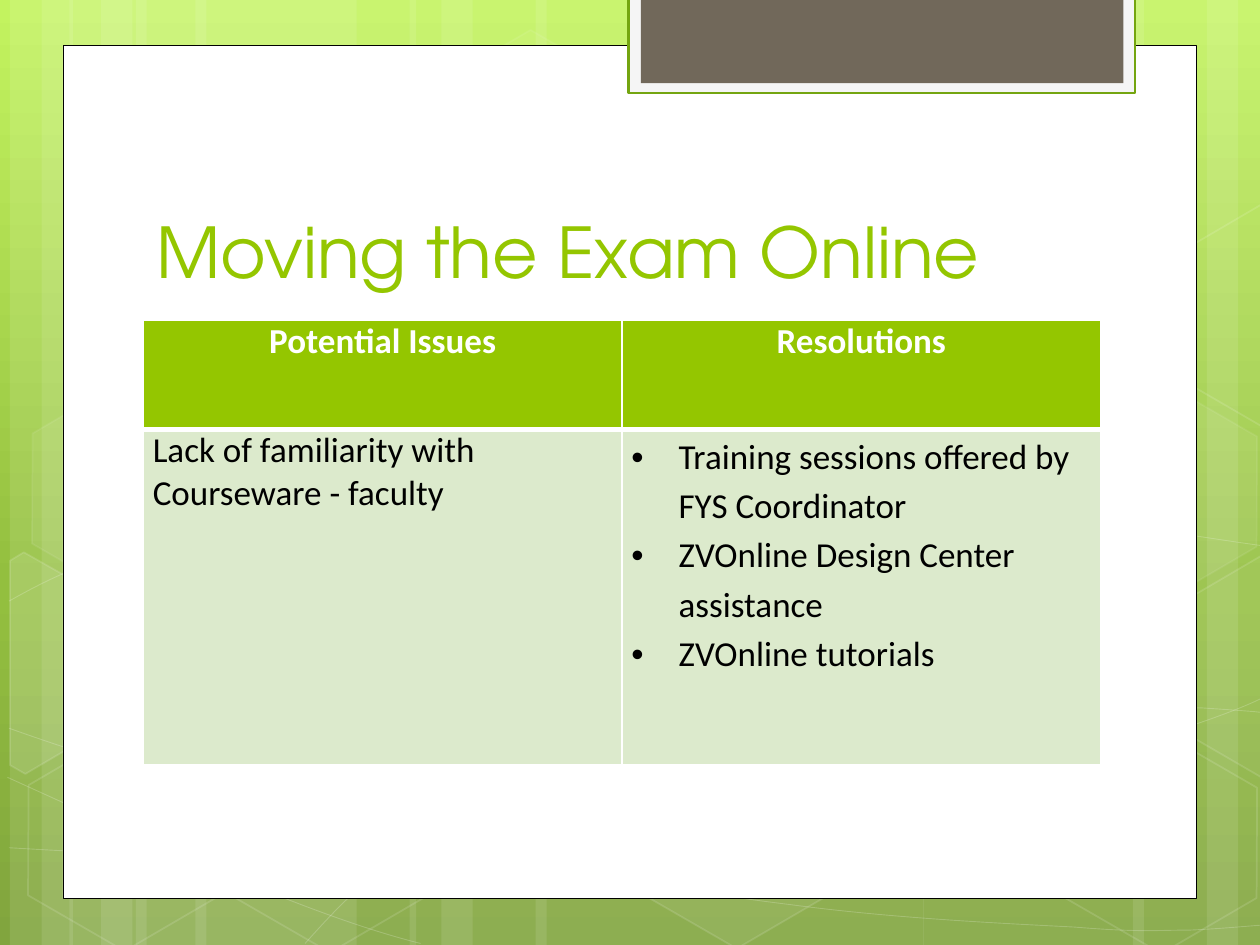
from copy import deepcopy
from dataclasses import dataclass
from math import cos, radians, sin
from typing import Optional

from lxml.etree import SubElement
from pptx import Presentation
from pptx.dml.color import RGBColor
from pptx.enum.shapes import MSO_SHAPE as Shape
from pptx.enum.text import MSO_ANCHOR as Anchor, PP_ALIGN as Align
from pptx.oxml import parse_xml
from pptx.oxml.ns import nsdecls, qn
from pptx.util import Cm, Pt

WHITE = RGBColor(0xFF, 0xFF, 0xFF)
BLACK = RGBColor(0x00, 0x00, 0x00)
LIME = RGBColor(0x94, 0xC6, 0x00)
PALE_GREEN = RGBColor(0xDC, 0xEA, 0xCC)
DARK_GREEN = RGBColor(0x74, 0xA5, 0x10)
OFF_WHITE = RGBColor(0xF5, 0xF5, 0xF5)
TAUPE = RGBColor(0x71, 0x68, 0x5A)
BACKGROUND = [(0, RGBColor(0xC3, 0xF3, 0x5F)), (0.62, RGBColor(0x93, 0xBF, 0x3F)),
              (1, RGBColor(0x81, 0xA5, 0x3E))]
WIDTH, HEIGHT = 25.4, 19.05
TILT = 30


@dataclass
class Style:
    fill: Optional[RGBColor] = None
    fill_alpha: int = 100
    line: Optional[RGBColor] = None
    line_alpha: int = 100
    weight: float = 1


@dataclass
class Strips:
    edge: float
    direction: int
    wide: float


@dataclass
class Hexagon:
    left: float
    top: float
    fill_alpha: int = 0
    line_alpha: int = 12


STRIPS = [Strips(0.2, 1, 4.45), Strips(1.4, 1, 4.45),
          Strips(25.6, -1, 4.45), Strips(8.26, 1, 7.82)]
CURVES = [
    [(0.18, 17.09), (1.55, 17.17), (2.92, 17.25), (4.83, 17.22), (6.73, 17.2),
     (9.09, 17.15), (11.63, 16.89), (14.17, 16.64), (17.78, 16.15), (20.12, 15.67),
     (22.43, 15.19), (24.82, 14.43), (25.58, 14)],
    [(0.18, 12.12), (0.91, 11.71), (1.65, 11.33), (3.07, 10.95), (4.52, 10.57),
     (6.58, 10.01), (8.81, 9.83), (11.07, 9.65), (13.82, 9.63), (16.61, 9.83),
     (19.41, 10.03), (24.05, 10.82), (25.58, 11.02)],
    [(0.15, 15.67), (3.23, 17.07), (6.27, 18.47), (8.48, 19.02)],
    [(0.18, 14.68), (0.97, 14.96), (1.78, 15.24), (3.25, 15.65), (4.72, 16.03),
     (6.93, 16.66), (9.07, 17.09), (11.18, 17.53), (13.84, 17.98), (15.95, 18.24),
     (18.06, 18.52), (20.32, 18.62), (21.67, 18.69), (22.99, 18.8), (23.34, 18.75),
     (24, 18.75), (24.66, 18.72), (25.12, 18.67), (25.58, 18.64)],
    [(6.15, 19.02), (6.6, 18.52), (7.06, 18.01), (7.67, 17.55), (8.28, 17.09),
     (9.14, 16.59), (9.86, 16.23), (10.57, 15.88), (11, 15.72), (11.94, 15.47),
     (12.85, 15.21), (14.55, 14.86), (15.44, 14.68), (16.36, 14.5), (16.48, 14.5),
     (17.27, 14.45), (18.06, 14.38), (19.3, 14.3), (20.17, 14.27), (21.06, 14.25),
     (22.5, 14.27), (22.5, 14.27), (22.5, 14.27), (24.21, 14.27), (24.21, 14.27),
     (24.66, 14.3), (25.1, 14.33), (25.32, 14.35), (25.55, 14.38), (25.48, 14.35),
     (25.55, 14.38)],
]
HEXAGONS = [Hexagon(8.48, 0.91, 4, 8), Hexagon(12.62, 14.96, 6), Hexagon(0.28, 15.01),
            Hexagon(0.36, 7.92, 7, 8), Hexagon(4.42, 15.04), Hexagon(19.13, 11.51, 10),
            Hexagon(21.18, 15.06), Hexagon(21.18, 7.98, 7, 8)]
LEFT_CENTER, RIGHT_CENTER = (0.91, 13.59), (25.02, 13.21)
LEFT_CUT = [(0.2, 11.3), (0.48, 11.13), (2.44, 12.24), (2.41, 14.48), (0.51, 15.6),
            (0.2, 15.42)]
RIGHT_CUT = [(23.52, 12.32), (25.43, 11.2), (25.63, 11.33), (25.63, 15.57),
             (25.45, 15.67), (23.52, 14.55)]
HEADERS = ["Potential Issues", "Resolutions"]
ISSUE = "Lack of familiarity with Courseware - faculty"
RESOLUTIONS = ["Training sessions offered by FYS Coordinator",
               "ZVOnline Design Center assistance", "ZVOnline tutorials"]


def set_alpha(color_format, percent: int) -> None:
    if percent < 100:
        color = color_format._xFill.find(qn("a:srgbClr"))
        SubElement(color, qn("a:alpha"), val=str(percent * 1000))


def apply_style(sp, style: Style) -> None:
    sp.shadow.inherit = False
    for fill, color, alpha in ((sp.fill, style.fill, style.fill_alpha),
                               (sp.line.fill, style.line, style.line_alpha)):
        if color is None:
            fill.background()
            continue
        fill.solid()
        fill.fore_color.rgb = color
        set_alpha(fill.fore_color, alpha)
    if style.line is not None:
        sp.line.width = Pt(style.weight)


def add_box(slide, kind, left: float, top: float, width: float, height: float,
            style: Style):
    sp = slide.shapes.add_shape(kind, Cm(left), Cm(top), Cm(width), Cm(height))
    apply_style(sp, style)
    return sp


def add_outline(slide, points: list, closed: bool, style: Style):
    emu = [(Cm(x), Cm(y)) for x, y in points]
    builder = slide.shapes.build_freeform(*emu[0])
    builder.add_line_segments(emu[1:], close=closed)
    sp = builder.convert_to_shape()
    apply_style(sp, style)
    return sp


def add_curve(slide, knots: list, style: Style) -> None:
    sp = add_outline(slide, knots, False, style)
    segments = list(sp._element.iter(qn("a:lnTo")))
    for i in range(0, len(segments), 3):
        curve = SubElement(segments[i].getparent(), qn("a:cubicBezTo"))
        for segment in segments[i:i + 3]:
            curve.append(segment[0])
            segment.getparent().remove(segment)


def add_cut_hexagon(slide, points: list, center: tuple, style: Style,
                    shift: float = 0) -> None:
    c, s = cos(radians(TILT)), sin(radians(TILT))
    cx, cy = center
    upright = [(cx + (x - cx) * c + (y - cy) * s,
                cy - (x - cx) * s + (y - cy) * c + shift) for x, y in points]
    add_outline(slide, upright, True, style).rotation = TILT


def add_background(slide) -> None:
    fill = slide.background.fill
    fill.gradient()
    fill.gradient_angle = 270
    stops = slide._element.find(".//" + qn("a:gsLst"))
    stops.append(deepcopy(stops[-1]))
    for stop, (position, color) in zip(fill.gradient_stops, BACKGROUND):
        stop.position = position
        stop.color.rgb = color


def add_decoration(slide) -> None:
    veil = Style(WHITE, 10)
    for s in STRIPS:
        for offset, width in ((2.54, s.wide), (0, 1.27), (0.64, 2.12)):
            start = s.edge + s.direction * offset
            left = start if s.direction > 0 else start - width
            add_box(slide, Shape.RECTANGLE, left, 0, width, HEIGHT, veil)
    for knots in CURVES:
        add_curve(slide, knots, Style(None, 0, WHITE, 20, 0.5))
    for h in HEXAGONS:
        style = Style(WHITE if h.fill_alpha else None, h.fill_alpha, WHITE, h.line_alpha)
        sp = add_box(slide, Shape.HEXAGON, h.left, h.top, 4.45, 3.86, style)
        sp.rotation = TILT
        sp.adjustments[0], sp.adjustments[1] = 0.285, 1.155
    add_cut_hexagon(slide, LEFT_CUT, LEFT_CENTER, Style(WHITE, 10, WHITE, 12))
    add_cut_hexagon(slide, RIGHT_CUT, RIGHT_CENTER, Style(WHITE, 4, WHITE, 12))
    add_cut_hexagon(slide, RIGHT_CUT, RIGHT_CENTER, Style(None, 0, WHITE, 12), -7.08)


def format_runs(p, font: str, size: float, color: RGBColor, bold: bool = False) -> None:
    for r in p.runs:
        r.font.name, r.font.size, r.font.bold = font, Pt(size), bold
        r.font.color.rgb = color


def add_title(slide, text: str) -> None:
    sp = slide.shapes.add_textbox(Cm(2.9), Cm(2.84), Cm(19.51), Cm(3.18))
    tf = sp.text_frame
    tf.word_wrap = True
    tf.vertical_anchor = Anchor.BOTTOM
    tf.text = text
    format_runs(tf.paragraphs[0], "TeX Gyre Adventor", 40, LIME)


def set_borders(cell, top: float, bottom: float) -> None:
    tc_pr = cell._tc.get_or_add_tcPr()
    for i, (side, weight) in enumerate((("L", 1), ("R", 1), ("T", top), ("B", bottom))):
        tc_pr.insert(i, parse_xml(
            f'<a:ln{side} {nsdecls("a")} w="{Pt(weight)}"><a:solidFill>'
            f'<a:srgbClr val="{WHITE}"/></a:solidFill></a:ln{side}>'))


def fill_cell(cell, lines: list, header: bool) -> None:
    cell.margin_left = cell.margin_right = Cm(0.19)
    cell.margin_top = cell.margin_bottom = Cm(0)
    cell.fill.solid()
    cell.fill.fore_color.rgb = LIME if header else PALE_GREEN
    set_borders(cell, 1 if header else 3, 3 if header else 1)
    cell.text_frame.text = "\n".join(lines)
    for p in cell.text_frame.paragraphs:
        p.alignment = Align.CENTER if header else Align.LEFT
        format_runs(p, "Calibri", 20, WHITE if header else BLACK, header)


def add_bullets(tf) -> None:
    for p in tf.paragraphs:
        p.line_spacing = 1.15
        p_pr = p._p.get_or_add_pPr()
        p_pr.set("marL", str(Cm(0.95)))
        p_pr.set("indent", str(-Cm(0.95)))
        SubElement(p_pr, qn("a:buFont"), typeface="Arial")
        SubElement(p_pr, qn("a:buChar"), char="•")
    tf.paragraphs[-1].space_after = Pt(10)


def add_issue_table(slide) -> None:
    frame = slide.shapes.add_table(2, 2, Cm(2.89), Cm(6.45), Cm(19.3), Cm(8.97))
    table = frame.table
    for row, height in zip(table.rows, (2.21, 6.76)):
        row.height = Cm(height)
    for col, (header, body) in enumerate(zip(HEADERS, ([ISSUE], RESOLUTIONS))):
        fill_cell(table.cell(0, col), [header], True)
        fill_cell(table.cell(1, col), body, False)
    add_bullets(table.cell(1, 1).text_frame)


def main() -> None:
    prs = Presentation()
    prs.slide_width, prs.slide_height = Cm(WIDTH), Cm(HEIGHT)
    slide = prs.slides.add_slide(prs.slide_layouts[6])
    add_background(slide)
    add_decoration(slide)
    add_box(slide, Shape.RECTANGLE, 1.27, 0.91, 22.86, 17.2,
            Style(WHITE, line=BLACK, weight=0.5))
    add_box(slide, Shape.RECTANGLE, 12.67, -0.05, 10.21, 1.93,
            Style(OFF_WHITE, line=DARK_GREEN, weight=1.25))
    add_box(slide, Shape.RECTANGLE, 12.92, -0.05, 9.73, 1.73, Style(TAUPE))
    add_title(slide, "Moving the Exam Online")
    add_issue_table(slide)
    prs.save("out.pptx")


if __name__ == "__main__":
    main()
